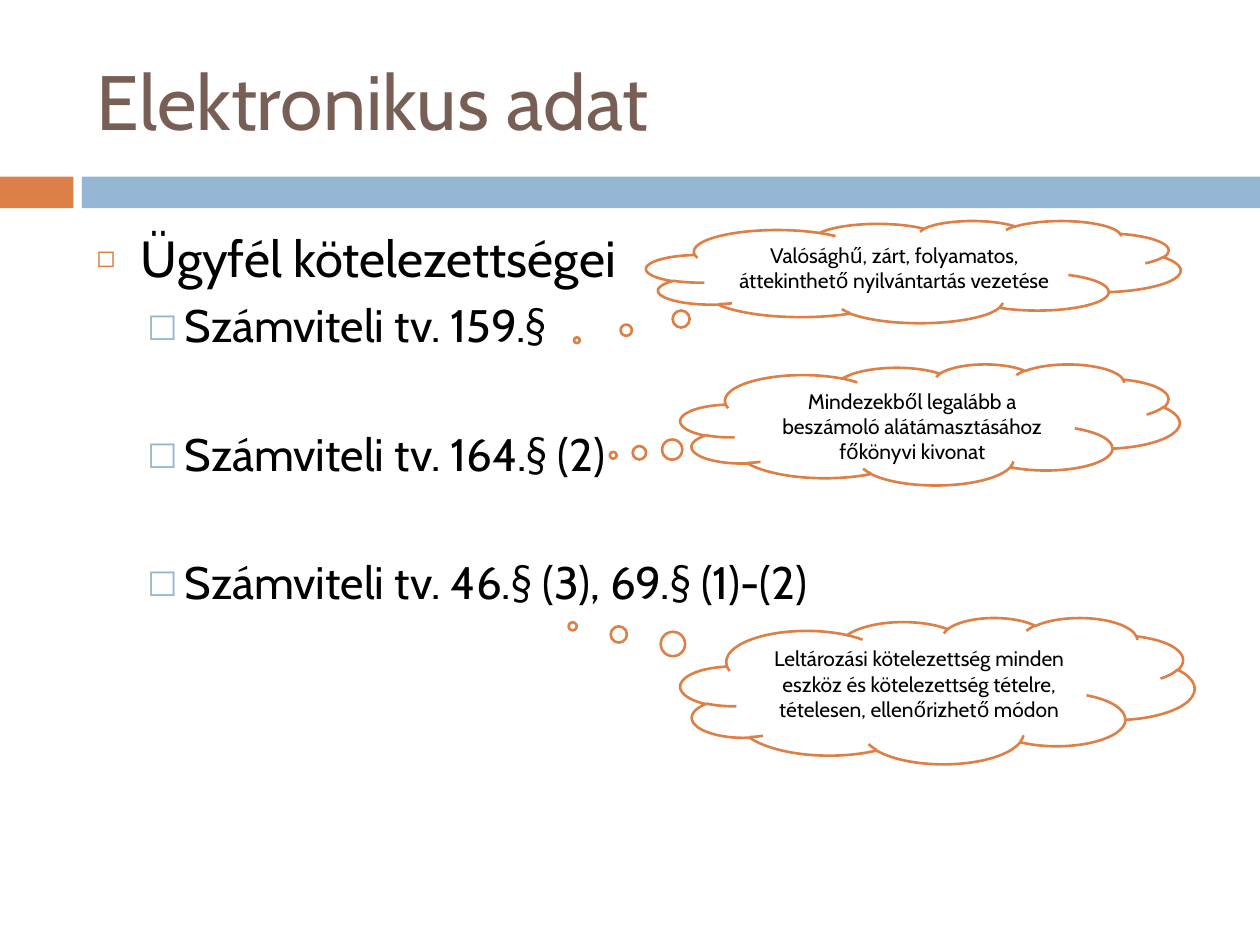
from lxml import etree
from pptx import Presentation, util as u
from pptx.dml.color import RGBColor
from pptx.enum import shapes, text
from pptx.oxml.ns import qn

COLOURS = {
    "orange": "DD8047",
    "blue": "94B6D2",
    "brown": "775F55",
    "black": "000000",
    "white": "FFFFFF",
}
FONT = "Cabin"


def rgb(name):
    return RGBColor.from_string(COLOURS[name])


class SlideBuilder:
    """Holds the style and the slide being filled."""

    def __init__(self, slide):
        self.slide = slide

    def style(self, para, size, colour="black"):
        for span in para.runs:
            span.font.name = FONT
            span.font.size = u.Pt(size)
            span.font.color.rgb = rgb(colour)

    def shape(self, kind, place, fill, line=None):
        item = self.slide.shapes.add_shape(kind, *map(u.Cm, place))
        item.shadow.inherit = False
        item.fill.solid()
        item.fill.fore_color.rgb = rgb(fill)
        if line:
            item.line.color.rgb = rgb(line)
            item.line.width = u.Pt(1.5)
        else:
            item.line.fill.background()
        return item

    def bar(self, place, fill):
        self.shape(shapes.MSO_SHAPE.RECTANGLE, place, fill)

    def text_box(self, place, anchor=text.MSO_ANCHOR.TOP):
        frame = self.slide.shapes.add_textbox(*map(u.Cm, place)).text_frame
        frame.word_wrap = True
        frame.vertical_anchor = anchor
        return frame

    def title(self, wording, place):
        para = self.text_box(place, text.MSO_ANCHOR.MIDDLE).paragraphs[0]
        para.text = wording
        self.style(para, 44, "brown")

    def bullet(self, para, mark, colour, percent, margin, hanging):
        props = para._p.get_or_add_pPr()
        props.set("marL", str(u.Cm(margin)))
        props.set("indent", str(-u.Cm(hanging)))
        tint = etree.SubElement(props, qn("a:buClr"))
        etree.SubElement(tint, qn("a:srgbClr"), val=COLOURS[colour])
        etree.SubElement(props, qn("a:buSzPct"), val=str(percent * 1000))
        etree.SubElement(props, qn("a:buFont"), typeface=FONT)
        etree.SubElement(props, qn("a:buChar"), char=mark)

    def outline(self, heading, items, place):
        frame = self.text_box(place)
        para = frame.paragraphs[0]
        para.text = heading
        para.space_before = u.Pt(7)
        self.style(para, 29)
        self.bullet(para, "◻", "orange", 60, 0.89, 0.89)
        for index, item in enumerate(items):
            para = frame.add_paragraph()
            para.text = item
            para.level = 1
            # Later items stand one line further apart
            para.space_before = u.Pt(42.2 if index else 5.5)
            self.style(para, 26)
            self.bullet(para, "□", "blue", 70, 1.78, 0.76)

    def cloud(self, wording, place, tail):
        item = self.shape(shapes.MSO_SHAPE.CLOUD_CALLOUT, place, "white", "orange")
        for index, value in enumerate(tail):
            item.adjustments[index] = value
        frame = item.text_frame
        frame.word_wrap = True
        frame.vertical_anchor = text.MSO_ANCHOR.TOP
        para = frame.paragraphs[0]
        para.text = wording
        para.alignment = text.PP_ALIGN.CENTER
        self.style(para, 12)


def main():
    deck = Presentation()
    deck.slide_width, deck.slide_height = u.Cm(25.4), u.Cm(19.05)
    page = SlideBuilder(deck.slides.add_slide(deck.slide_layouts[6]))

    # Divider band
    page.bar((0, 3.56, 1.48, 0.64), "orange")
    page.bar((1.65, 3.56, 23.75, 0.64), "blue")

    # Title and outline
    page.title("Elektronikus adat", (1.7, 0.64, 22.66, 2.74))
    page.outline(
        "Ügyfél kötelezettségei",
        [
            "Számviteli tv. 159.§",
            "Számviteli tv. 164.§ (2)",
            "Számviteli tv. 46.§ (3), 69.§ (1)-(2)",
        ],
        (1.7, 4.45, 22.66, 12.5),
    )

    # Thought clouds explaining each section of the act
    clouds = [
        ("Valósághű, zárt, folyamatos, áttekinthető nyilvántartás vezetése",
         (13.03, 4.45, 10.77, 2.06), (-0.63, 0.67)),
        ("Mindezekből legalább a beszámoló alátámasztásához főkönyvi kivonat",
         (13.72, 7.34, 10.06, 2.44), (-0.635, 0.254)),
        ("Leltározási kötelezettség minden eszköz és kötelezettség tételre, "
         "tételesen, ellenőrizhető módon",
         (13.72, 12.45, 10.36, 2.95), (-0.71, -0.44)),
    ]
    for wording, place, tail in clouds:
        page.cloud(wording, place, tail)

    deck.save("out.pptx")


if __name__ == "__main__":
    main()
